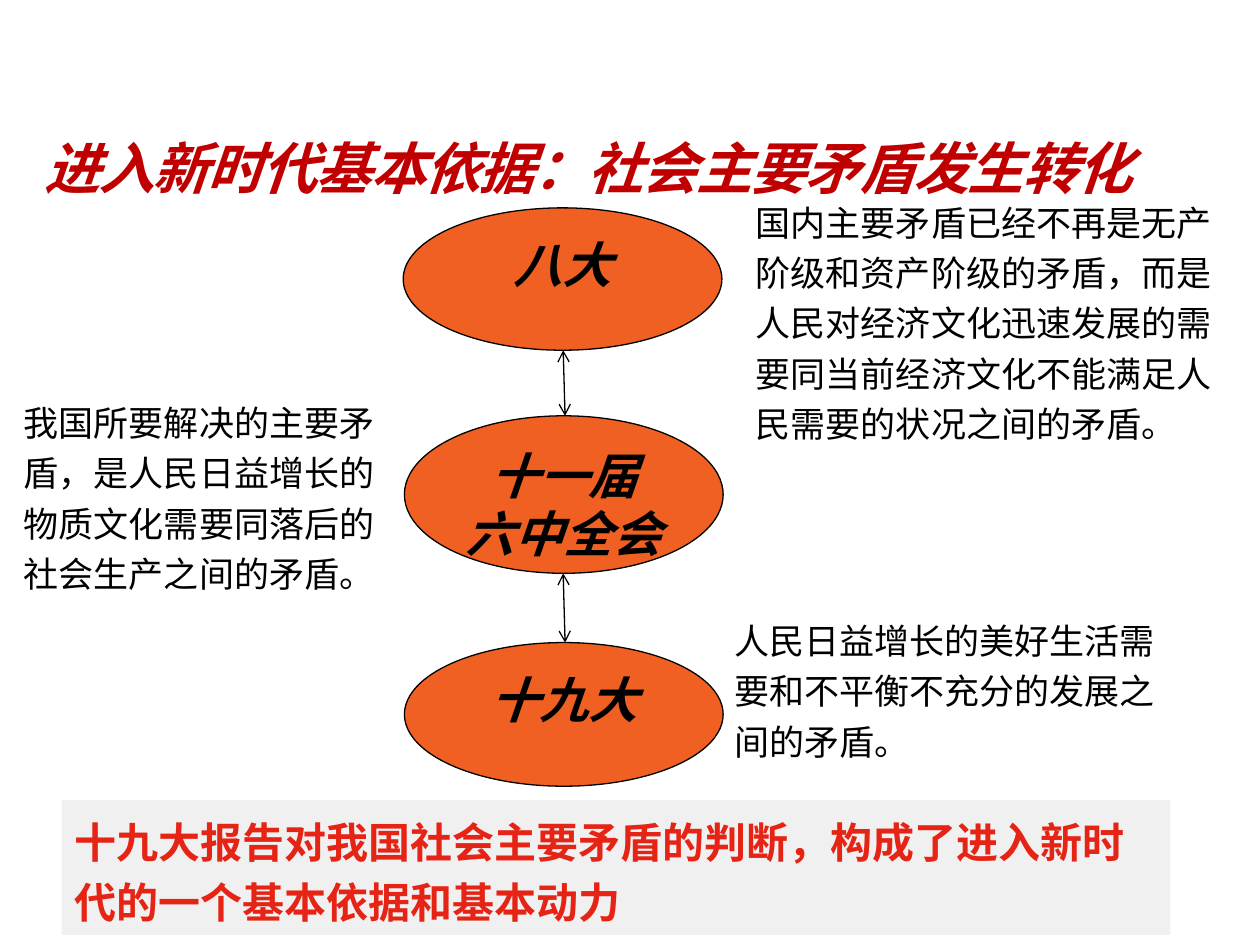
from dataclasses import dataclass

from lxml import etree
from pptx import Presentation, util as u
from pptx.dml.color import RGBColor
from pptx.enum import shapes, text
from pptx.oxml import ns


@dataclass(frozen=True)
class Theme:
    title_color: str = "C00000"
    oval_fill: str = "F16023"
    ink: str = "000000"
    banner_fill: str = "F0F0F0"
    banner_ink: str = "E52415"
    heading_font: str = "Noto Sans CJK SC"
    body_font: str = "Arial"
    title_size: int = 32
    oval_size: int = 28
    banner_size: int = 24
    body_size: int = 20
    line_width: float = 0.75


COLUMNS, ROWS = 100, 75


def write_text(shape, lines, *, size, color, font, bold=False, italic=False,
               align=text.PP_ALIGN.LEFT, spacing=1.0, tracking=None):
    frame = shape.text_frame
    frame.word_wrap = True
    frame.auto_size = text.MSO_AUTO_SIZE.NONE
    frame.vertical_anchor = text.MSO_ANCHOR.TOP
    frame.text = "\n".join(lines)
    for paragraph in frame.paragraphs:
        paragraph.alignment = align
        paragraph.line_spacing = spacing
        paragraph.space_before = u.Pt(0)
        for run in paragraph.runs:
            run.font.size = u.Pt(size)
            run.font.name = font
            run.font.bold = bold
            run.font.italic = italic
            run.font.color.rgb = RGBColor.from_string(color)
            properties = run.font._element
            east_asian = etree.Element(ns.qn("a:ea"), typeface=Theme.heading_font)
            properties.find(ns.qn("a:latin")).addnext(east_asian)
            if tracking is not None:
                properties.set("spc", str(tracking * 100))


class SlideBuilder:
    def __init__(self, presentation, theme):
        self.theme = theme
        self.column = presentation.slide_width / COLUMNS
        self.row = presentation.slide_height / ROWS
        self.slide = presentation.slides.add_slide(presentation.slide_layouts[5])

    def place(self, left, top, width, height):
        """Turn grid columns and rows into slide lengths."""
        return (u.Emu(round(left * self.column)), u.Emu(round(top * self.row)),
                u.Emu(round(width * self.column)), u.Emu(round(height * self.row)))

    def title(self, words, *box):
        shape = self.slide.shapes.title
        shape.left, shape.top, shape.width, shape.height = self.place(*box)
        write_text(shape, [words], size=self.theme.title_size,
                   color=self.theme.title_color, font=self.theme.heading_font,
                   bold=True, italic=True, spacing=1.3, tracking=-1)
        shape.text_frame.margin_left = u.Inches(0.2)

    def filled(self, kind, box, fill):
        shape = self.slide.shapes.add_shape(kind, *self.place(*box))
        shape.shadow.inherit = False
        shape.fill.solid()
        shape.fill.fore_color.rgb = RGBColor.from_string(fill)
        return shape

    def oval(self, lines, *box):
        shape = self.filled(shapes.MSO_SHAPE.OVAL, box, self.theme.oval_fill)
        self.outline(shape.line)
        write_text(shape, lines, size=self.theme.oval_size, color=self.theme.ink,
                   font=self.theme.heading_font, bold=True, italic=True,
                   align=text.PP_ALIGN.CENTER)

    def banner(self, words, *box):
        shape = self.filled(shapes.MSO_SHAPE.RECTANGLE, box, self.theme.banner_fill)
        shape.line.fill.background()
        write_text(shape, [words], size=self.theme.banner_size,
                   color=self.theme.banner_ink, font=self.theme.body_font,
                   bold=True, spacing=1.2)

    def note(self, words, *box):
        shape = self.slide.shapes.add_textbox(*self.place(*box))
        write_text(shape, [words], size=self.theme.body_size, color=self.theme.ink,
                   font=self.theme.body_font, spacing=1.2)

    def outline(self, line):
        line.color.rgb = RGBColor.from_string(self.theme.ink)
        line.width = u.Pt(self.theme.line_width)

    def double_arrow(self, *ends):
        connector = self.slide.shapes.add_connector(
            shapes.MSO_CONNECTOR.STRAIGHT, *self.place(*ends))
        self.outline(connector.line)
        line = connector.line._get_or_add_ln()
        for end in ("a:headEnd", "a:tailEnd"):
            etree.SubElement(line, ns.qn(end), type="arrow")
        etree.SubElement(connector._element.spPr, ns.qn("a:effectLst"))


def main():
    presentation = Presentation()
    presentation.slide_width, presentation.slide_height = u.Inches(10), u.Inches(7.5)
    builder = SlideBuilder(presentation, Theme())

    builder.title("进入新时代基本依据：社会主要矛盾发生转化", 1.5, 8.5, 91.5, 8)

    congresses = [
        (["八大"], 32, 16.5, 11.3),
        (["十一届", "六中全会"], 32.1, 33, 12.5),
        (["十九大"], 32.1, 51, 11.4),
    ]
    for lines, left, top, height in congresses:
        builder.oval(lines, left, top, 25.3, height)
    for (_, _, top, height), (_, _, next_top, _) in zip(congresses, congresses[1:]):
        builder.double_arrow(44.7, top + height, 44.85, next_top)

    builder.note("国内主要矛盾已经不再是无产阶级和资产阶级的矛盾，而是人民对经济文化迅速发展的需要"
                 "同当前经济文化不能满足人民需要的状况之间的矛盾。", 59, 14.8, 39, 21.2)
    builder.note("我国所要解决的主要矛盾，是人民日益增长的物质文化需要同落后的社会生产之间的矛盾。",
                 0.9, 30.7, 31.2, 17.2)
    builder.note("人民日益增长的美好生活需要和不平衡不充分的发展之间的矛盾。",
                 57.3, 48, 37.9, 13.1)
    builder.banner("十九大报告对我国社会主要矛盾的判断，构成了进入新时代的一个基本依据和基本动力",
                   4.9, 63.5, 88, 10.7)

    presentation.save("out.pptx")


if __name__ == "__main__":
    main()
